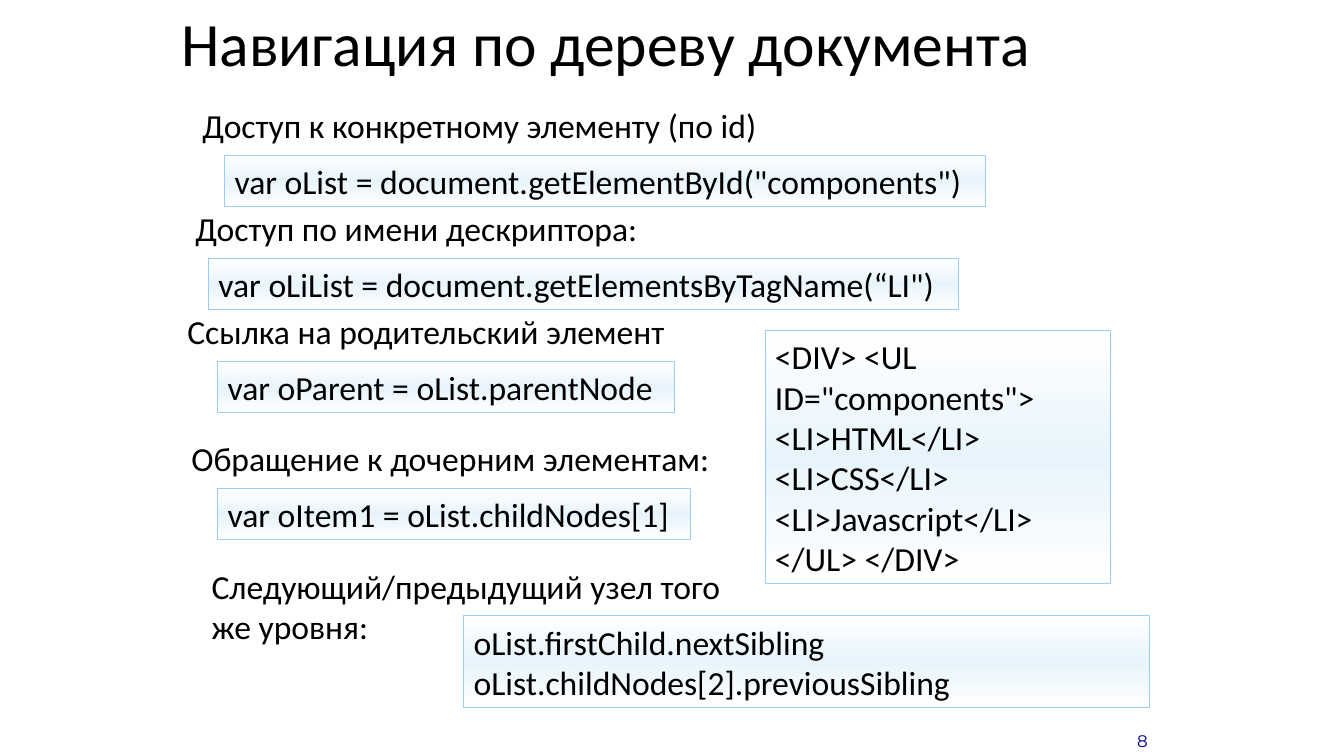
from copy import deepcopy

from pptx import Presentation
from pptx import util as u
from pptx.dml import color
from pptx.enum import shapes, text

LINE_HEIGHT = 36.5
TWO_LINES = 65.5
CODE_DROP = 39.6

EXAMPLES = [
    (137.5, 71.3, "Доступ к конкретному элементу (по id)", 414, LINE_HEIGHT,
     23, 'var oList = document.getElementById("components")', 543.6),
    (132.5, 145.2, "Доступ по имени дескриптора:", 333.4, LINE_HEIGHT,
     16.5, "var oLiList = document.getElementsByTagName(“LI\")", 535.7),
    (126.7, 218.9, "Ссылка на родительский элемент", 364.3, LINE_HEIGHT,
     28.8, "var oParent = oList.parentNode", 326.2),
    (129.6, 309.6, "Обращение к дочерним элементам:", 388, LINE_HEIGHT,
     25.9, "var oItem1 = oList.childNodes[1]", 337.7),
    (144, 400.3, "Следующий/предыдущий узел того же уровня:", 396.7, TWO_LINES,
     187.2, "oList.firstChild.nextSibling oList.childNodes[2].previousSibling", 489.6),
]
MARKUP = ('<DIV> <UL ID="components"> <LI>HTML</LI> <LI>CSS</LI> '
          "<LI>Javascript</LI> </UL> </DIV>")


def rgb(value):
    return color.RGBColor.from_string(value)


def points(*values):
    return [u.Pt(value) for value in values]


def write(shape, words, size=24, font="Calibri", ink="000000",
          anchor=text.MSO_ANCHOR.MIDDLE, align=text.PP_ALIGN.LEFT):
    frame = shape.text_frame
    frame.word_wrap = True
    frame.vertical_anchor = anchor
    para = frame.paragraphs[0]
    para.text = words
    para.alignment = align
    para.font.size = u.Pt(size)
    para.font.name = font
    para.font.color.rgb = rgb(ink)
    return para


def add_label(page, box, words, **style):
    return write(page.shapes.add_textbox(*points(*box)), words, **style)


def add_code(page, box, words):
    panel = page.shapes.add_shape(shapes.MSO_SHAPE.RECTANGLE, *points(*box))
    panel.shadow.inherit = False
    panel.line.color.rgb = rgb("99CCFF")
    panel.line.width = u.Pt(0.75)
    panel.fill.gradient()
    panel.fill.gradient_angle = 90
    stop_list = panel.element.xpath(".//a:gsLst")[0]
    stop_list.append(deepcopy(stop_list[-1]))
    tints = [(0, "FFFFFF"), (0.5, "E8F4FC"), (1, "FFFFFF")]
    for stop, (position, tint) in zip(panel.fill.gradient_stops, tints):
        stop.position = position
        stop.color.rgb = rgb(tint)
    write(panel, words)


def add_example(page, left, top, label, label_width, height, indent, code, code_width):
    add_label(page, (left, top, label_width, height), label,
              anchor=text.MSO_ANCHOR.TOP)
    add_code(page, (left + indent, top + CODE_DROP, code_width, height), code)


def add_title(page, box, words):
    add_label(page, box, words, size=44).line_spacing = 0.9


def add_page_number(page, box, number):
    add_label(page, box, number, size=12, font="Montserrat", ink="000099",
              anchor=text.MSO_ANCHOR.BOTTOM, align=text.PP_ALIGN.CENTER)


def build_navigation(deck):
    page = deck.slides.add_slide(deck.slide_layouts[6])
    add_title(page, (122.4, -7.9, 717, 82), "Навигация по дереву документа")
    for example in EXAMPLES:
        add_example(page, *example)
    add_code(page, (546.5, 236.2, 247, 180.7), MARKUP)
    add_page_number(page, (792, 504, 48, 36), "8")


def main():
    deck = Presentation()
    deck.slide_width, deck.slide_height = points(960, 540)
    build_navigation(deck)
    deck.save("out.pptx")


if __name__ == "__main__":
    main()
